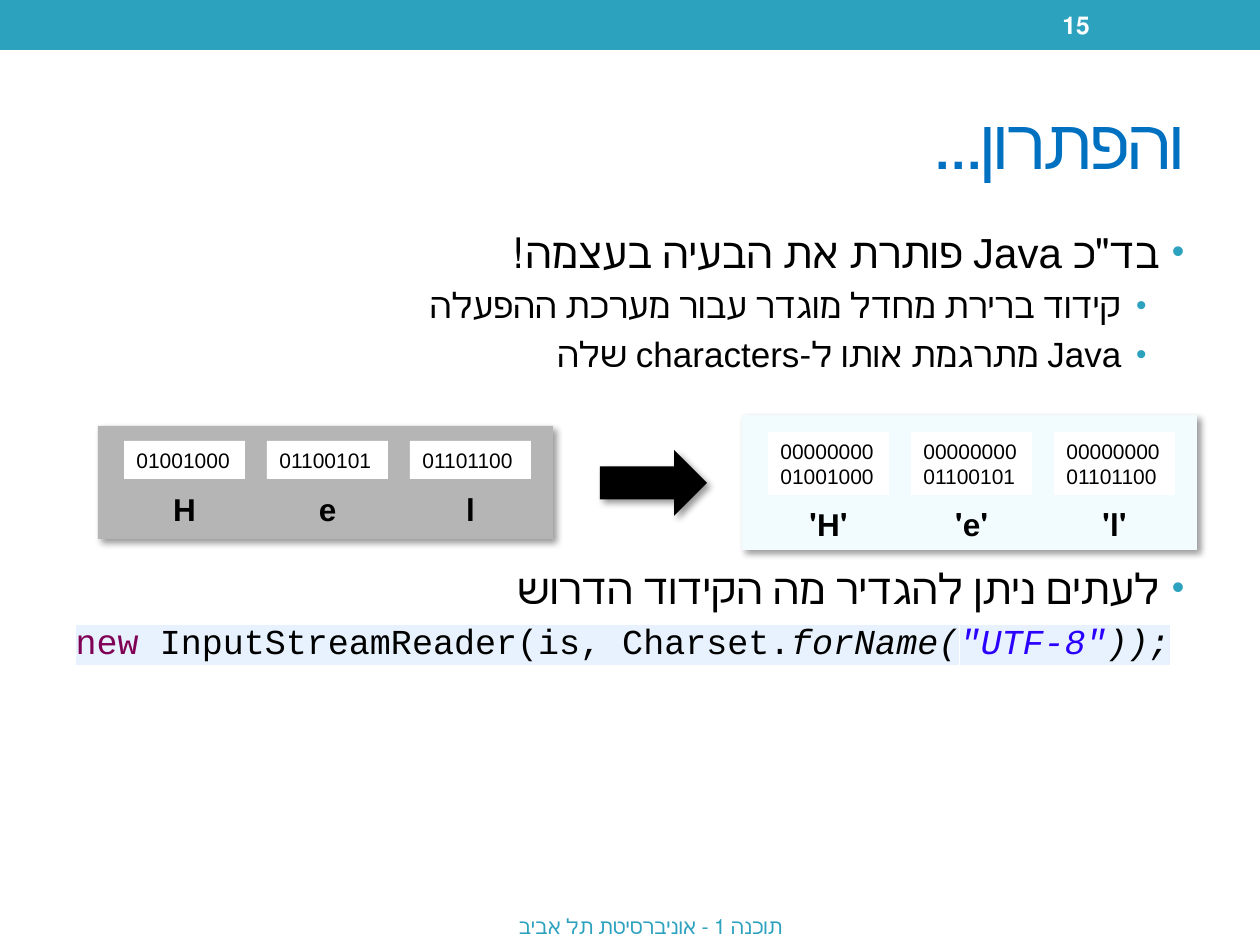
"""Build the slide on how Java decodes bytes into characters."""
from lxml import etree
from pptx import Presentation
from pptx.dml.color import RGBColor
from pptx.enum.shapes import MSO_SHAPE
from pptx.enum.text import MSO_ANCHOR, PP_ALIGN
from pptx.oxml import parse_xml
from pptx.oxml.ns import qn
from pptx.util import Emu, Pt

RECT, ARROW = MSO_SHAPE.RECTANGLE, MSO_SHAPE.RIGHT_ARROW
LEFT, CENTER, RIGHT = PP_ALIGN.LEFT, PP_ALIGN.CENTER, PP_ALIGN.RIGHT
TOP, MIDDLE = MSO_ANCHOR.TOP, MSO_ANCHOR.MIDDLE
PX = 914400 / 126
INDENT = 25
ACCENT = "2DA2BF"
NS = 'xmlns:a="http://schemas.openxmlformats.org/drawingml/2006/main"'
SHADOW = (f'<a:effectLst {NS}><a:outerShdw blurRad="50800" dist="38100" dir="2700000" '
          'algn="tl" rotWithShape="0"><a:srgbClr val="000000"><a:alpha val="40000"/>'
          '</a:srgbClr></a:outerShdw></a:effectLst>')
BULLET = (f'<a:buClr {NS}><a:srgbClr val="{ACCENT}"/></a:buClr>',
          f'<a:buSzPct {NS} val="85000"/>',
          f'<a:buFont {NS} typeface="Arial"/>',
          f'<a:buChar {NS} char="•"/>')


def add_block(kind, box, fill, shadow=False):
    block = slide.shapes.add_shape(kind, *[Emu(round(v * PX)) for v in box])
    block.fill.solid()
    block.fill.fore_color.rgb = RGBColor.from_string(fill)
    block.line.fill.background()
    block.shadow.inherit = False
    if shadow:
        properties = block._element.spPr
        properties.replace(properties.find(qn("a:effectLst")), parse_xml(SHADOW))
    return block


def write(holder, box, text, size, color, align, anchor=TOP, bold=False, rtl=True, font="Arial"):
    holder.left, holder.top, holder.width, holder.height = [Emu(round(v * PX)) for v in box]
    frame = holder.text_frame
    frame.word_wrap = True
    frame.vertical_anchor = anchor
    paragraph = frame.paragraphs[0]
    paragraph.text = text
    paragraph.alignment = align
    paragraph._p.get_or_add_pPr().set("rtl", str(int(rtl)))
    paragraph.font.name, paragraph.font.size, paragraph.font.bold = font, Pt(size), bold
    paragraph.font.color.rgb = RGBColor.from_string(color)
    return paragraph


prs = Presentation()
prs.slide_width, prs.slide_height = Emu(round(1260 * PX)), Emu(round(945 * PX))
slide = prs.slides.add_slide(prs.slide_layouts[1])

add_block(RECT, (0, 0, 1260, 50), ACCENT)
heading = write(slide.shapes.title, (63, 73, 1134, 136), "והפתרון...", 40, "0070C0",
                RIGHT, MIDDLE)
heading.runs[0]._r.get_or_add_rPr().set("spc", "-100")

points = slide.placeholders[1]
points.left, points.top, points.width, points.height = [
    Emu(round(v * PX)) for v in (63, 220, 1134, 672)]
bullets = [
    ('בד"כ Java פותרת את הבעיה בעצמה!', 0, 24, 0),
    ("קידוד ברירת מחדל מוגדר עבור מערכת ההפעלה", 1, 20, 4),
    ("Java מתרגמת אותו ל-characters שלה", 1, 20, 4),
    ("לעתים ניתן להגדיר מה הקידוד הדרוש", 0, 24, 107),
]
frame = points.text_frame
for i, (text, level, size, before) in enumerate(bullets):
    point = frame.paragraphs[0] if i == 0 else frame.add_paragraph()
    point.text, point.level, point.alignment = text, level, RIGHT
    point.space_before = Pt(before)
    layout = point._p.get_or_add_pPr()
    layout.set("rtl", "1")
    layout.set("marL", str(round((INDENT + 38 * level) * PX)))
    layout.set("indent", str(round(-INDENT * PX)))
    for part in BULLET:
        layout.append(parse_xml(part))
    point.font.name, point.font.size = "Arial", Pt(size)
    point.font.color.rgb = RGBColor.from_string("000000")

code = frame.add_paragraph()
code.alignment, code.space_before = LEFT, Pt(4)
layout = code._p.get_or_add_pPr()
layout.set("marL", str(round(INDENT * PX)))
layout.set("indent", str(round(-INDENT * PX)))
etree.SubElement(layout, qn("a:buNone"))
code.font.name, code.font.size = "Courier New", Pt(20)
for text, color, italic in [
    ("new", "7F0055", False),
    (" InputStreamReader(is, Charset.", "000000", False),
    ("forName(", "000000", True),
    ('"UTF-8"', "2A00FF", True),
    ("));", "000000", True),
]:
    token = code.add_run()
    token.text, token.font.italic = text, italic
    token.font.color.rgb = RGBColor.from_string(color)
    highlight = f'<a:highlight {NS}><a:srgbClr val="E8F2FE"/></a:highlight>'
    token._r.rPr.find(qn("a:solidFill")).addnext(parse_xml(highlight))

letters = [("H", "01001000"), ("e", "01100101"), ("l", "01101100")]
panels = [
    ((98, 426, 455, 113), "B5B5B5", 441, 38, 484, "", ""),
    ((742, 415, 455, 135), "F2FBFD", 432, 63, 499, "00000000", "'"),
]
for panel, fill, cell_top, cell_height, label_top, high_byte, quote in panels:
    add_block(RECT, panel, fill, shadow=True)
    for i, (letter, low_byte) in enumerate(letters):
        left = panel[0] + 26 + 143 * i
        cell = (left, cell_top, 121, cell_height)
        write(add_block(RECT, cell, "FFFFFF"), cell, high_byte + low_byte, 12, "000000",
              LEFT, rtl=False)
        write(slide.shapes.add_textbox(0, 0, 0, 0), (left, label_top, 121, 50),
              quote + letter + quote, 18, "000000", CENTER, bold=True)
add_block(ARROW, (600, 450, 107, 66), "000000", shadow=True)

write(slide.shapes.add_textbox(0, 0, 0, 0), (1050, 2, 147, 46), "15", 14, "FFFFFF",
      LEFT, MIDDLE, bold=True)
write(slide.shapes.add_textbox(0, 0, 0, 0), (367, 903, 567, 46),
      "תוכנה 1 - אוניברסיטת תל אביב", 12, ACCENT, CENTER, MIDDLE, font="Roboto")

prs.save("out.pptx")
